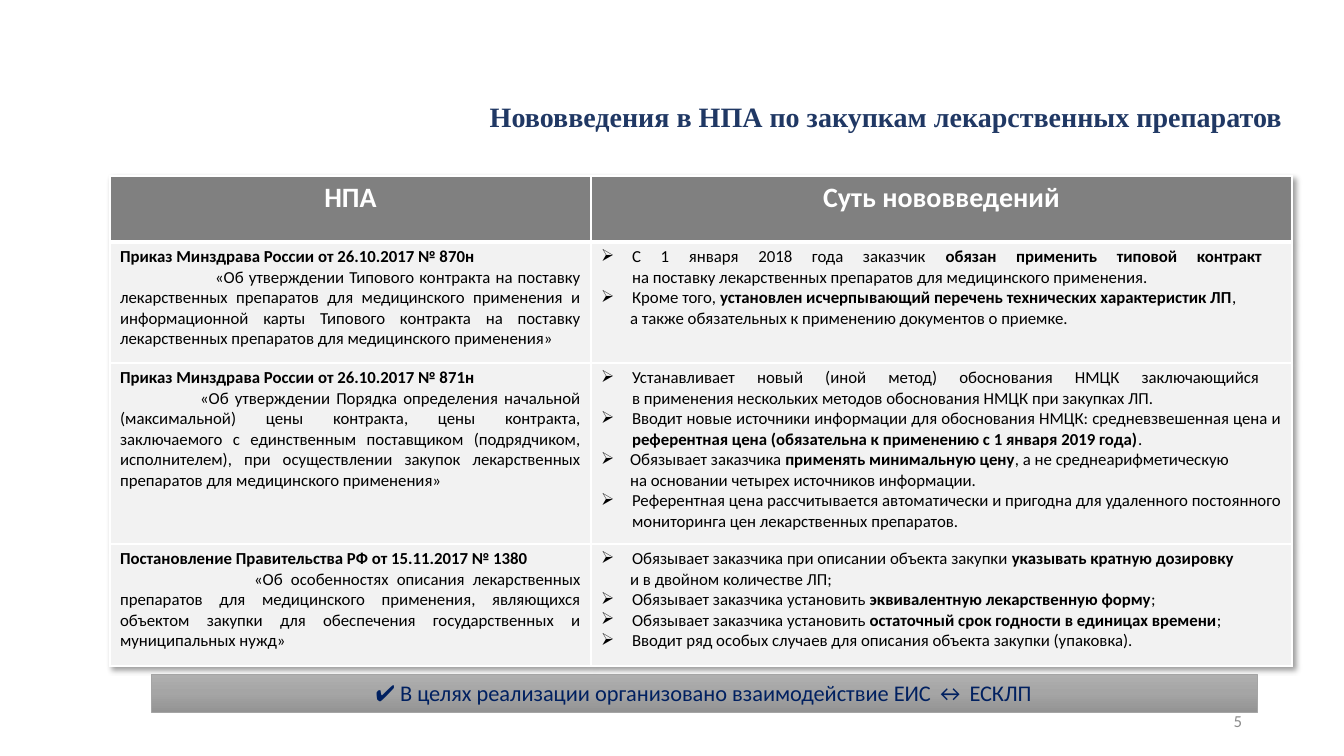
from dataclasses import dataclass
from typing import Any

from pptx import Presentation
from pptx.dml.color import RGBColor
from pptx.enum.shapes import MSO_SHAPE
from pptx.enum.text import MSO_ANCHOR, PP_ALIGN
from pptx.oxml import parse_xml
from pptx.oxml.ns import nsdecls
from pptx.util import Emu, Pt


@dataclass(frozen=True)
class Theme:
    sans: str = "Calibri"
    serif: str = "Times New Roman"
    black: str = "000000"
    white: str = "FFFFFF"
    header: str = "808080"
    body: str = "F2F2F2"
    title: str = "203864"
    navy: str = "002060"
    number: str = "8C8C8C"
    banner_line: str = "A5A5A5"
    banner_stops: tuple[str, ...] = ("AFAFAF", "A5A5A5", "939393")
    heading_size: int = 20
    banner_size: int = 16
    text_size: int = 12


@dataclass(frozen=True)
class Style:
    size: int
    color: str
    font: str = "Calibri"
    bold: bool = False


@dataclass(frozen=True)
class Item:
    text: str
    margin: int = 0
    indent: int = 0
    bullet: str = ""
    align: PP_ALIGN = PP_ALIGN.JUSTIFY


@dataclass(frozen=True)
class Label:
    place: tuple[int, int, int, int]
    text: str
    style: Style
    anchor: MSO_ANCHOR


@dataclass(frozen=True)
class Act:
    name: str
    subject: str
    indent: int
    height: int
    changes: tuple[Item, ...]


THEME = Theme()
BODY = Style(THEME.text_size, THEME.black)
HEADER = Style(THEME.heading_size, THEME.white, bold=True)
HEADER_HEIGHT = 66
COLUMNS = {"НПА": 481, "Суть нововведений": 701}


def px(value: int) -> Emu:
    return Emu(round(value * 914400 / 100.8))


def point(text: str, hang: int = 31) -> Item:
    return Item(text, hang, -hang, "➢")


def follow(text: str) -> Item:
    return Item(text, indent=29)


ACTS = (
    Act("Приказ Минздрава России от 26.10.2017 № 870н",
        "«Об утверждении Типового контракта на поставку лекарственных препаратов для медицинского применения "
        "и информационной карты Типового контракта на поставку лекарственных препаратов для медицинского применения»",
        95, 121, (
            point("С 1 января 2018 года заказчик **обязан применить типовой контракт **\n"
                  "на поставку лекарственных препаратов для медицинского применения."),
            point("Кроме того, **установлен исчерпывающий перечень технических характеристик ЛП**,"),
            follow("а также обязательных к применению документов о приемке."),
        )),
    Act("Приказ Минздрава России от 26.10.2017 № 871н",
        "«Об утверждении Порядка определения начальной (максимальной) цены контракта, цены контракта, "
        "заключаемого с единственным поставщиком (подрядчиком, исполнителем), при осуществлении закупок "
        "лекарственных препаратов для медицинского применения»",
        80, 181, (
            point("Устанавливает новый (иной метод) обоснования НМЦК заключающийся \n"
                  "в применения нескольких методов обоснования НМЦК при закупках ЛП."),
            point("Вводит новые источники информации для обоснования НМЦК: средневзвешенная цена и "
                  "**референтная цена (обязательна к применению с 1 января 2019 года)**."),
            point("Обязывает заказчика **применять минимальную цену**, а не среднеарифметическую", 29),
            follow("на основании четырех источников информации."),
            point("Референтная цена рассчитывается автоматически и пригодна для удаленного постоянного "
                  "мониторинга цен лекарственных препаратов."),
        )),
    Act("Постановление Правительства РФ от 15.11.2017 № 1380",
        "«Об особенностях описания лекарственных препаратов для медицинского применения, являющихся "
        "объектом закупки для обеспечения государственных и муниципальных нужд»",
        134, 122, (
            point("Обязывает заказчика при описании объекта закупки **указывать кратную дозировку**"),
            follow("и в двойном количестве ЛП;"),
            point("Обязывает заказчика установить **эквивалентную лекарственную форму**;"),
            point("Обязывает заказчика установить **остаточный срок годности в единицах времени**;"),
            point("Вводит ряд особых случаев для описания объекта закупки (упаковка)."),
        )),
)

LABELS = (
    Label((448, 95, 844, 44), "Нововведения в НПА по закупкам лекарственных препаратов",
          Style(THEME.heading_size, THEME.title, THEME.serif, True), MSO_ANCHOR.TOP),
    Label((950, 701, 302, 40), "5", Style(THEME.text_size, THEME.number), MSO_ANCHOR.MIDDLE),
)


def assign(target: Any, values: dict[str, Any]) -> None:
    for name, value in values.items():
        setattr(target, name, value)


def write(frame: Any, items: tuple[Item, ...], style: Style) -> None:
    frame.word_wrap = True
    for index, item in enumerate(items):
        para = frame.add_paragraph() if index else frame.paragraphs[0]
        para.alignment = item.align
        properties = para._p.get_or_add_pPr()
        properties.set("marL", str(px(item.margin)))
        properties.set("indent", str(px(item.indent)))
        if item.bullet:
            properties.append(parse_xml(f'<a:buChar {nsdecls("a")} char="{item.bullet}"/>'))
        for part, chunk in enumerate(item.text.split("**")):
            for row, line in enumerate(chunk.split("\n")):
                if row:
                    para.add_line_break()
                if not line:
                    continue
                span = para.add_run()
                span.text = line
                assign(span.font, {"name": style.font, "size": Pt(style.size),
                                   "bold": style.bold or part % 2 == 1})
                span.font.color.rgb = RGBColor.from_string(style.color)


def fill_cell(cell: Any, items: tuple[Item, ...], style: Style, fill: str, bottom: int) -> None:
    properties = cell._tc.get_or_add_tcPr()
    for side, width in {"L": 1, "R": 1, "T": 1, "B": bottom}.items():
        properties.append(parse_xml(
            f'<a:ln{side} {nsdecls("a")} w="{Pt(width)}"><a:solidFill>'
            f'<a:srgbClr val="{THEME.white}"/></a:solidFill></a:ln{side}>'))
    cell.fill.solid()
    cell.fill.fore_color.rgb = RGBColor.from_string(fill)
    write(cell.text_frame, items, style)


def draw_table(page: Any) -> None:
    heights = [HEADER_HEIGHT, *(act.height for act in ACTS)]
    table = page.shapes.add_table(len(heights), len(COLUMNS), px(110), px(176),
                                  px(sum(COLUMNS.values())), px(sum(heights))).table
    table._tbl.tblPr.insert(0, parse_xml(
        f'<a:effectLst {nsdecls("a")}><a:outerShdw blurRad="50800" dist="38100" dir="2700000" algn="tl">'
        f'<a:srgbClr val="{THEME.black}"><a:alpha val="40000"/></a:srgbClr></a:outerShdw></a:effectLst>'))
    for row, height in zip(table.rows, heights):
        row.height = px(height)
    for index, (name, width) in enumerate(COLUMNS.items()):
        table.columns[index].width = px(width)
        fill_cell(table.cell(0, index), (Item(name, align=PP_ALIGN.CENTER),), HEADER, THEME.header, 3)
    for row, act in enumerate(ACTS, 1):
        summary = (Item(f"**{act.name}**", align=PP_ALIGN.LEFT), Item(act.subject, indent=act.indent))
        for column, items in enumerate((summary, act.changes)):
            fill_cell(table.cell(row, column), items, BODY, THEME.body, 1)


def draw_label(page: Any, label: Label) -> None:
    box = page.shapes.add_textbox(*map(px, label.place))
    box.text_frame.vertical_anchor = label.anchor
    write(box.text_frame, (Item(label.text, align=PP_ALIGN.RIGHT),), label.style)


def draw_banner(page: Any) -> None:
    box = page.shapes.add_shape(MSO_SHAPE.RECTANGLE, *map(px, (151, 674, 1106, 38)))
    box.shadow.inherit = False
    box.line.width = Pt(0.5)
    box.line.color.rgb = RGBColor.from_string(THEME.banner_line)
    stops = "".join(f'<a:gs pos="{index * 50000}"><a:srgbClr val="{color}"/></a:gs>'
                    for index, color in enumerate(THEME.banner_stops))
    box._element.spPr.insert(2, parse_xml(
        f'<a:gradFill {nsdecls("a")}><a:gsLst>{stops}</a:gsLst><a:lin ang="5400000" scaled="0"/></a:gradFill>'))
    write(box.text_frame, (Item("✔ В целях реализации организовано взаимодействие ЕИС ↔ ЕСКЛП",
                                align=PP_ALIGN.CENTER),), Style(THEME.banner_size, THEME.navy))


def main() -> None:
    deck = Presentation()
    assign(deck, {"slide_width": px(1344), "slide_height": px(756)})
    page = deck.slides.add_slide(deck.slide_layouts[6])
    draw_table(page)
    draw_banner(page)
    for label in LABELS:
        draw_label(page, label)
    deck.save("out.pptx")


if __name__ == "__main__":
    main()
